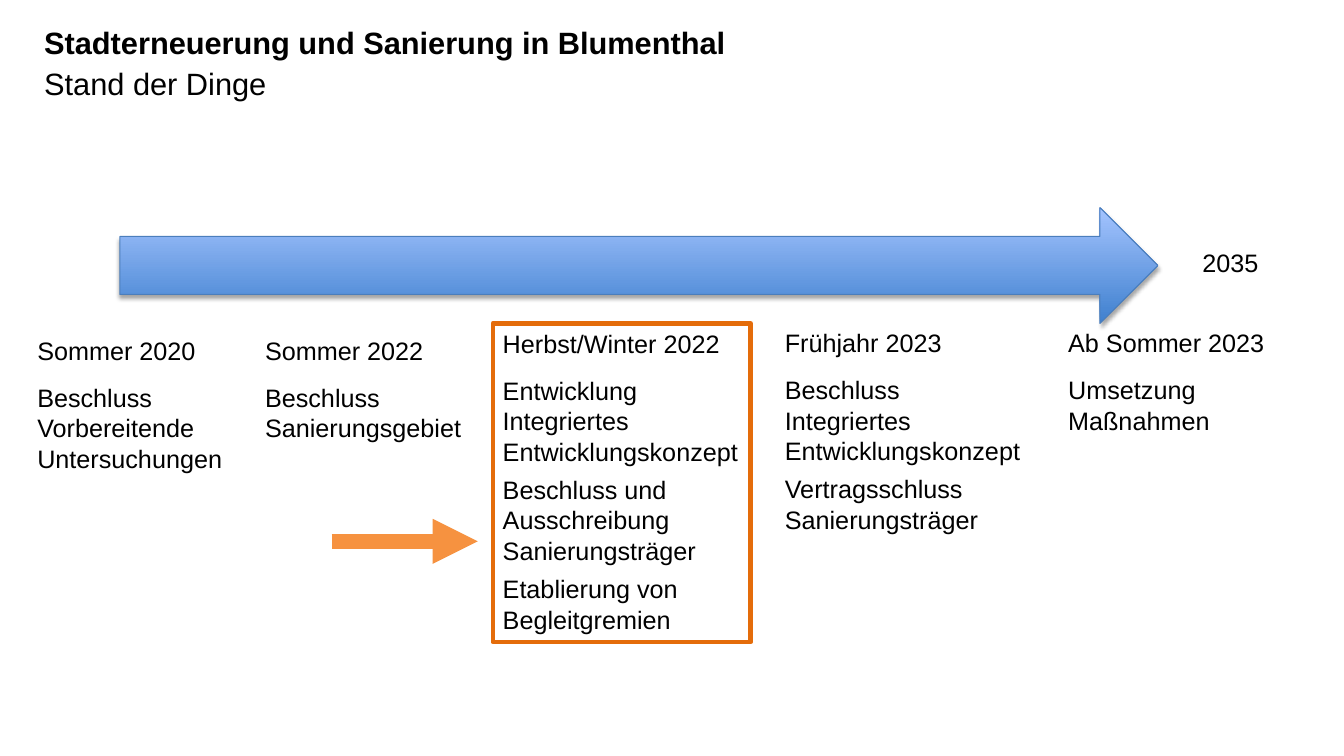
from lxml.etree import SubElement
from pptx import Presentation
from pptx.dml.color import RGBColor
from pptx.enum.shapes import MSO_CONNECTOR as Connector, MSO_SHAPE as Shape
from pptx.enum.text import MSO_ANCHOR as Anchor, MSO_AUTO_SIZE as AutoSize, PP_ALIGN as Align
from pptx.oxml.ns import qn
from pptx.util import Cm, Pt

BLACK = RGBColor(0x00, 0x00, 0x00)
BLUE_DARK = RGBColor(0x3F, 0x80, 0xCE)
BLUE_LIGHT = RGBColor(0xA4, 0xC4, 0xFF)
BLUE_LINE = RGBColor(0x4B, 0x7E, 0xBC)
ORANGE_FRAME = RGBColor(0xE4, 0x6C, 0x0A)
ORANGE_ARROW = RGBColor(0xF6, 0x92, 0x40)

PHASES = [
    ((0.69, 8.33, 5.61, 3.76), False,
     ["Sommer 2020", "Beschluss Vorbereitende Untersuchungen"]),
    ((6.43, 8.33, 5.61, 3.0), False,
     ["Sommer 2022", "Beschluss Sanierungsgebiet"]),
    ((12.42, 8.15, 6.5, 8.03), True,
     ["Herbst/Winter 2022", "Entwicklung Integriertes Entwicklungskonzept",
      "Beschluss und Ausschreibung Sanierungsträger",
      "Etablierung von Begleitgremien"]),
    ((19.53, 8.13, 6.5, 5.51), False,
     ["Frühjahr 2023", "Beschluss Integriertes Entwicklungskonzept",
      "Vertragsschluss Sanierungsträger"]),
    ((26.67, 8.13, 6.5, 3.0), False,
     ["Ab Sommer 2023", "Umsetzung Maßnahmen"]),
]


def to_cm(box):
    return [Cm(length) for length in box]


def add_run(paragraph, text, size, bold=False):
    paragraph.alignment = Align.LEFT
    run = paragraph.add_run()
    run.text = text
    run.font.name = "Arial"
    run.font.size = Pt(size)
    run.font.bold = bold
    run.font.color.rgb = BLACK


def fill_placeholder(placeholder, box, text, anchor, bold=False):
    placeholder.left, placeholder.top, placeholder.width, placeholder.height = to_cm(box)
    frame = placeholder.text_frame
    frame.vertical_anchor = anchor
    frame.auto_size = AutoSize.NONE
    paragraph = frame.paragraphs[0]
    properties = paragraph._p.get_or_add_pPr()
    properties.set("marL", "0")
    properties.set("indent", "0")
    SubElement(properties, qn("a:buNone"))
    paragraph.space_before = Pt(0)
    add_run(paragraph, text, 22, bold)


def add_heading(slide, box):
    left, top, width, height = box
    fill_placeholder(slide.shapes.title, (left, top, width, 1.22),
                     "Stadterneuerung und Sanierung in Blumenthal", Anchor.MIDDLE, True)
    fill_placeholder(slide.placeholders[1], (left, top + 1.04, width, height - 1.04),
                     "Stand der Dinge", Anchor.TOP)


def add_shadow(shape):
    shape.shadow.inherit = False
    effects = shape._element.spPr.find(qn("a:effectLst"))
    shadow = SubElement(effects, qn("a:outerShdw"), blurRad=str(Pt(3.1)),
                        dist=str(Pt(1.8)), dir="5400000", rotWithShape="0")
    color = SubElement(shadow, qn("a:srgbClr"), val=str(BLACK))
    SubElement(color, qn("a:alpha"), val="35000")


def add_phase(slide, box, framed, texts):
    if framed:
        shape = slide.shapes.add_shape(Shape.RECTANGLE, *to_cm(box))
        shape.shadow.inherit = False
        shape.fill.background()
        shape.line.color.rgb = ORANGE_FRAME
        shape.line.width = Pt(3.25)
    else:
        shape = slide.shapes.add_textbox(*to_cm(box))
    frame = shape.text_frame
    frame.word_wrap = True
    frame.auto_size = AutoSize.SHAPE_TO_FIT_TEXT
    frame.vertical_anchor = Anchor.TOP
    for index, text in enumerate(texts):
        paragraph = frame.add_paragraph() if index else frame.paragraphs[0]
        if index:
            paragraph.space_before = Pt(12 if index == 1 else 6)
        add_run(paragraph, text, 18)


def add_time_arrow(slide, box):
    left, top, width, height = box
    arrow = slide.shapes.add_shape(Shape.RIGHT_ARROW, *to_cm(box))
    arrow.fill.gradient()
    arrow.fill.gradient_angle = 90
    for stop, color, position in zip(arrow.fill.gradient_stops, (BLUE_DARK, BLUE_LIGHT), (0, 1)):
        stop.color.rgb = color
        stop.position = position
    arrow.line.color.rgb = BLUE_LINE
    arrow.line.width = Pt(0.75)
    add_shadow(arrow)
    add_phase(slide, (left + width + 0.87, top + 0.87, 2.87, 1.03), False, ["2035"])


def add_marker(slide, left, top, width):
    marker = slide.shapes.add_connector(Connector.STRAIGHT, Cm(left), Cm(top),
                                        Cm(left + width), Cm(top))
    marker.line.color.rgb = ORANGE_ARROW
    marker.line.width = Pt(10.75)
    SubElement(marker.line._get_or_add_ln(), qn("a:tailEnd"), type="triangle")
    SubElement(marker._element.spPr, qn("a:effectLst"))


def main():
    presentation = Presentation()
    presentation.slide_width, presentation.slide_height = Cm(33.87), Cm(19.05)
    slide = presentation.slides.add_slide(presentation.slide_layouts[1])
    add_heading(slide, (0.86, 0.46, 30.48, 2.41))
    add_time_arrow(slide, (3.02, 5.23, 26.16, 2.92))
    for box, framed, texts in PHASES:
        add_phase(slide, box, framed, texts)
    add_marker(slide, 8.36, 13.64, 3.68)
    presentation.save("out.pptx")


if __name__ == "__main__":
    main()
